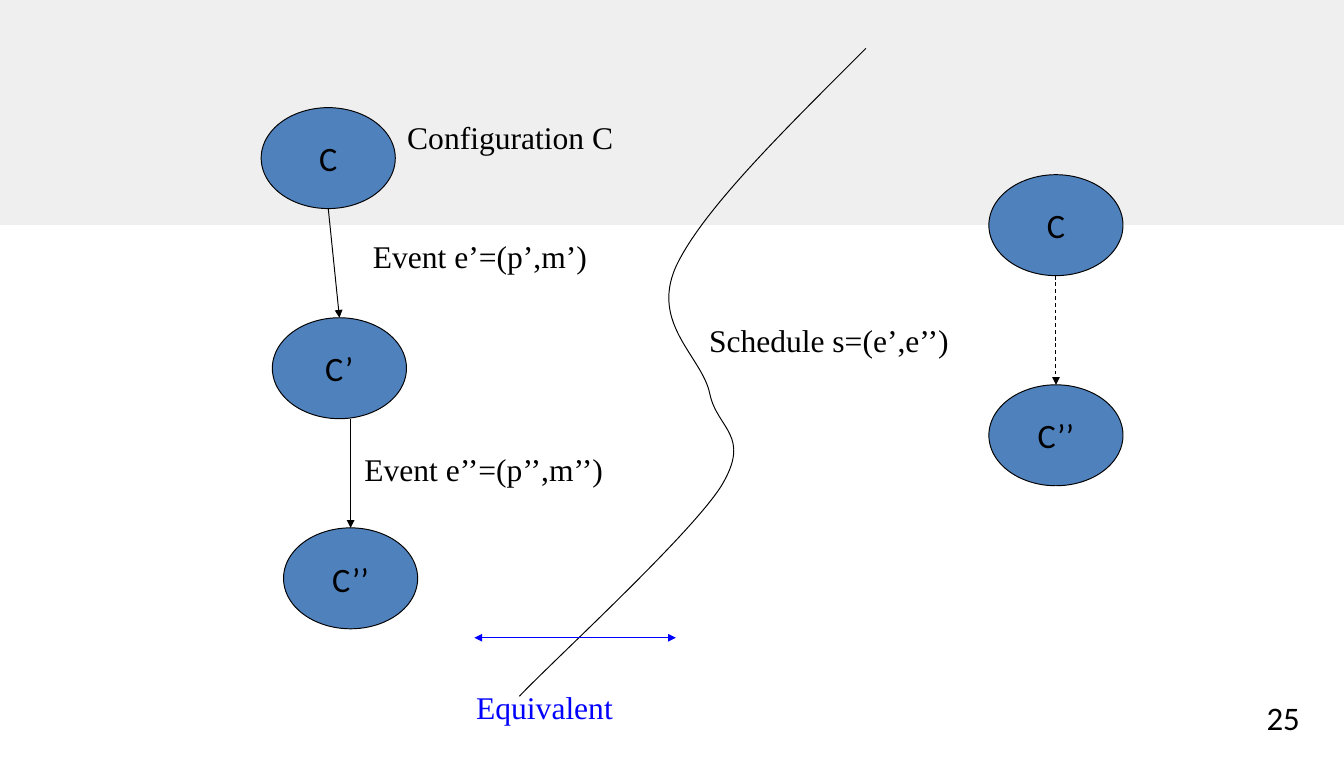
from lxml.etree import SubElement
from pptx import Presentation
from pptx.dml.color import RGBColor
from pptx.enum.dml import MSO_LINE
from pptx.enum.shapes import MSO_CONNECTOR, MSO_SHAPE
from pptx.enum.text import MSO_ANCHOR, MSO_AUTO_SIZE, PP_ALIGN
from pptx.oxml.ns import qn
from pptx.util import Cm, Pt

BLACK, BLUE, NODE_BLUE, GREY, WHITE = "000000", "0000FF", "4F81BD", "EFEFEF", "FFFFFF"
NODE_WIDTH, NODE_HEIGHT = 3.6, 2.71
NODE_STEP = 5.64
LABEL_HEIGHT = 1.4


def colour(hex_text):
    return RGBColor.from_string(hex_text)


def write(box, text, font="Times New Roman", size=24, color=BLACK,
          align=PP_ALIGN.LEFT, anchor=MSO_ANCHOR.TOP, wrap=False):
    frame = box.text_frame
    frame.word_wrap = wrap
    frame.vertical_anchor = anchor
    frame.margin_left = frame.margin_right = Cm(0.36)
    frame.margin_top = frame.margin_bottom = Cm(0.18)
    para = frame.paragraphs[0]
    para.alignment = align
    span = para.add_run()
    span.text = text
    span.font.name = font
    span.font.size = Pt(size)
    span.font.color.rgb = colour(color)


class Diagram:
    def __init__(self, page, line_width=0.75):
        self.shapes = page.shapes
        self.line_width = Pt(line_width)

    def outline(self, shape, color=BLACK):
        shape.line.color.rgb = colour(color)
        shape.line.width = self.line_width

    def block(self, kind, left, top, width, height, fill):
        shape = self.shapes.add_shape(kind, Cm(left), Cm(top), Cm(width), Cm(height))
        shape.shadow.inherit = False
        shape.fill.solid()
        shape.fill.fore_color.rgb = colour(fill)
        shape.line.fill.background()
        return shape

    def node(self, text, left, top):
        shape = self.block(MSO_SHAPE.OVAL, left, top, NODE_WIDTH, NODE_HEIGHT, NODE_BLUE)
        self.outline(shape)
        write(shape, text, font="Calibri", size=26,
              align=PP_ALIGN.CENTER, anchor=MSO_ANCHOR.MIDDLE)
        return shape

    def label(self, text, left, top, width, color=BLACK):
        box = self.shapes.add_textbox(Cm(left), Cm(top), Cm(width), Cm(LABEL_HEIGHT))
        write(box, text, color=color)
        box.text_frame.auto_size = MSO_AUTO_SIZE.SHAPE_TO_FIT_TEXT

    def arrow(self, start, end, color=BLACK, both_ends=False):
        line = self.shapes.add_connector(MSO_CONNECTOR.STRAIGHT, *start, *end)
        self.outline(line, color)
        SubElement(line._element.spPr, qn("a:effectLst"))
        for tag in ("a:headEnd", "a:tailEnd") if both_ends else ("a:tailEnd",):
            SubElement(line.line._get_or_add_ln(), qn(tag), type="triangle")
        return line

    def step(self, source, target, start_x=None, dashed=False):
        """Arrow from the foot of one node to the top of the next."""
        if start_x is None:
            start_x = source.left + source.width // 2
        start = (start_x, source.top + source.height)
        line = self.arrow(start, (target.left + target.width // 2, target.top))
        line.end_connect(target, 0)
        if dashed:
            line.line.dash_style = MSO_LINE.DASH

    def curve(self, points):
        """Open Bezier curve: a start point, then three points per segment."""
        corners = [(Cm(x), Cm(y)) for x, y in points]
        builder = self.shapes.build_freeform(*corners[0])
        builder.add_line_segments(corners[1:], close=False)
        shape = builder.convert_to_shape()
        shape.shadow.inherit = False
        shape.fill.background()
        self.outline(shape)
        path = shape._element.find(".//" + qn("a:path"))
        lines = path.findall(qn("a:lnTo"))
        for first in range(0, len(lines), 3):
            bezier = SubElement(path, qn("a:cubicBezTo"))
            for line in lines[first:first + 3]:
                bezier.append(line[0])
                path.remove(line)


def main():
    deck = Presentation()
    deck.slide_width, deck.slide_height = Cm(36.07), Cm(20.32)
    diagram = Diagram(deck.slides.add_slide(deck.slide_layouts[6]))
    diagram.block(MSO_SHAPE.RECTANGLE, -1.5, -0.84, 38.76, 6.88, GREY)

    first, second, third = [
        diagram.node(text, 7.01 + 0.3 * row, 2.89 + NODE_STEP * row)
        for row, text in enumerate(("C", "C’", "C’’"))]
    diagram.step(first, second)
    diagram.step(second, third, start_x=third.left + third.width // 2)

    for text, left, top, width in (
            ("Event e’=(p’,m’)", 9.65, 6.17, 6.96),
            ("Event e’’=(p’’,m’’)", 9.42, 11.91, 8.23),
            ("Configuration C", 10.57, 3, 6.3),
            ("Schedule s=(e’,e’’)", 18.67, 8.43, 7.72)):
        diagram.label(text, left, top, width)

    before, after = [diagram.node(text, 26.54, 4.69 + NODE_STEP * row)
                     for row, text in enumerate(("C", "C’’"))]
    diagram.step(before, after, dashed=True)

    diagram.curve([
        (23.24, 1.3),
        (21.06, 3.48), (18.85, 5.64), (18.14, 7.16),
        (17.45, 8.71), (18.85, 9.58), (19.05, 10.57),
        (19.25, 11.53), (20.19, 11.68), (19.35, 13.06),
        (18.49, 14.4), (14.83, 17.75), (13.94, 18.69)])
    diagram.arrow((Cm(12.73), Cm(17.12)), (Cm(18.14), Cm(17.12)), BLUE, both_ends=True)
    diagram.label("Equivalent", 12.42, 18.29, 4.45, BLUE)

    number = diagram.block(MSO_SHAPE.RECTANGLE, 33.07, 18.62, 2.74, 1.27, WHITE)
    write(number, "25", font="Calibri", size=25, align=PP_ALIGN.CENTER,
          anchor=MSO_ANCHOR.MIDDLE, wrap=True)
    deck.save("out.pptx")


if __name__ == "__main__":
    main()
